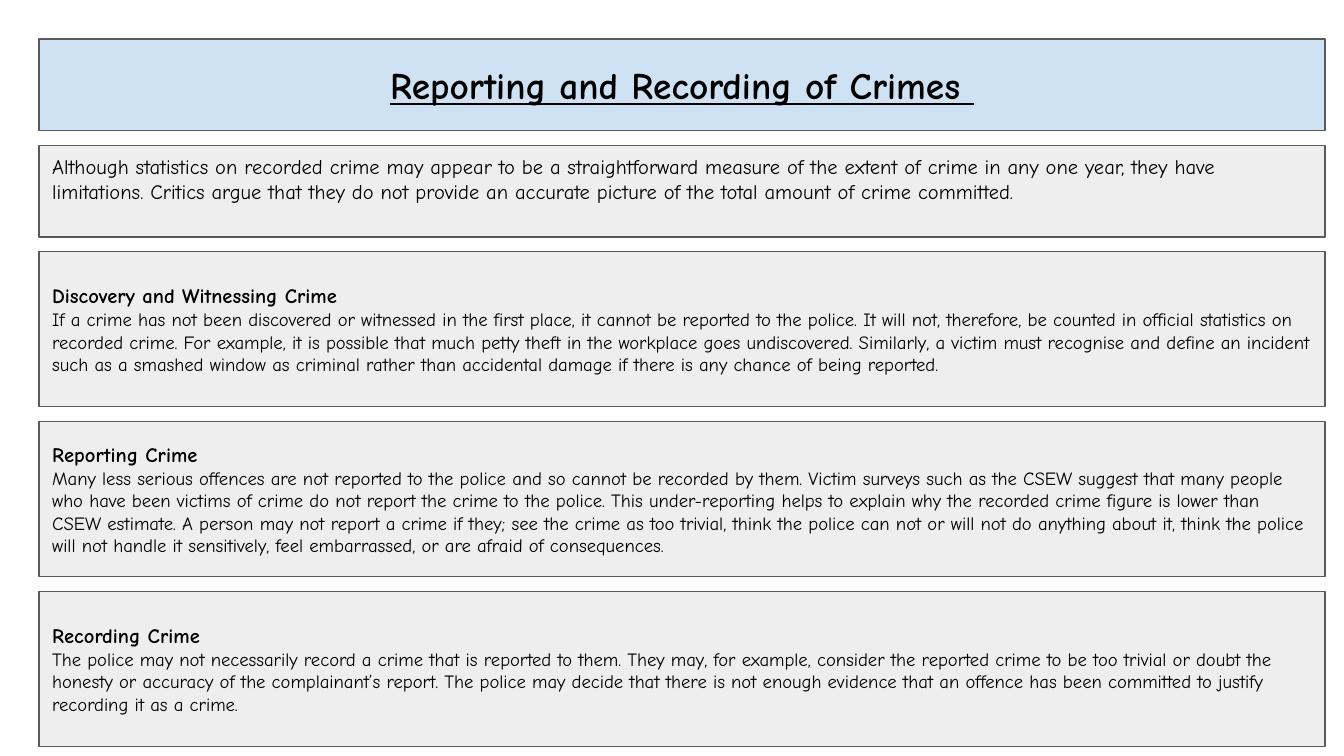
from dataclasses import dataclass

from pptx import Presentation
from pptx.dml.color import RGBColor
from pptx.enum import shapes, text
from pptx.slide import Slide
from pptx.util import Pt

FONT = "Comic Neue"
BLACK = RGBColor(0x00, 0x00, 0x00)
BORDER = RGBColor(0x59, 0x59, 0x59)
BLUE = RGBColor(0xCF, 0xE2, 0xF3)
GREY = RGBColor(0xEE, 0xEE, 0xEE)

LEFT, TOP, WIDTH, GAP = 20.9, 20.9, 689, 8
INSET = 7.2


@dataclass(frozen=True)
class Line:
    words: str
    size: float
    bold: bool = False
    underline: bool = False
    alignment: text.PP_ALIGN = text.PP_ALIGN.LEFT


@dataclass(frozen=True)
class Panel:
    height: float
    lines: tuple[Line, ...]
    fill: RGBColor = GREY
    top_inset: float = INSET
    bottom_inset: float = INSET


def section(heading: str, body: str) -> Panel:
    return Panel(83, (Line(heading, 11, bold=True), Line(body, 10)))


PANELS = (
    Panel(
        49,
        (Line("Reporting and Recording of Crimes ", 20, bold=True, underline=True,
              alignment=text.PP_ALIGN.CENTER),),
        fill=BLUE,
    ),
    Panel(
        49,
        (Line("Although statistics on recorded crime may appear to be a straightforward "
              "measure of the extent of crime in any one year, they have limitations. "
              "Critics argue that they do not provide an accurate picture of the total "
              "amount of crime committed.", 11),),
        top_inset=4,
        bottom_inset=17,
    ),
    section(
        "Discovery and Witnessing Crime",
        "If a crime has not been discovered or witnessed in the first place, it cannot be "
        "reported to the police. It will not, therefore, be counted in official statistics "
        "on recorded crime. For example, it is possible that much petty theft in the "
        "workplace goes undiscovered. Similarly, a victim must recognise and define an "
        "incident such as a smashed window as criminal rather than accidental damage if "
        "there is any chance of being reported.",
    ),
    section(
        "Reporting Crime",
        "Many less serious offences are not reported to the police and so cannot be recorded "
        "by them. Victim surveys such as the CSEW suggest that many people who have been "
        "victims of crime do not report the crime to the police. This under-reporting helps "
        "to explain why the recorded crime figure is lower than CSEW estimate. A person may "
        "not report a crime if they; see the crime as too trivial, think the police can not "
        "or will not do anything about it, think the police will not handle it sensitively, "
        "feel embarrassed, or are afraid of consequences.",
    ),
    section(
        "Recording Crime",
        "The police may not necessarily record a crime that is reported to them. They may, "
        "for example, consider the reported crime to be too trivial or doubt the honesty or "
        "accuracy of the complainant’s report. The police may decide that there is not "
        "enough evidence that an offence has been committed to justify recording it as a "
        "crime.",
    ),
)


def draw_panel(slide: Slide, panel: Panel, top: float) -> None:
    shape = slide.shapes.add_shape(
        shapes.MSO_SHAPE.RECTANGLE, Pt(LEFT), Pt(top), Pt(WIDTH), Pt(panel.height)
    )
    shape.shadow.inherit = False
    shape.fill.solid()
    shape.fill.fore_color.rgb = panel.fill
    shape.line.color.rgb = BORDER
    shape.line.width = Pt(0.75)

    frame = shape.text_frame
    frame.word_wrap = True
    frame.vertical_anchor = text.MSO_ANCHOR.MIDDLE
    frame.margin_left = frame.margin_right = Pt(INSET)
    frame.margin_top = Pt(panel.top_inset)
    frame.margin_bottom = Pt(panel.bottom_inset)

    for index, line in enumerate(panel.lines):
        paragraph = frame.add_paragraph() if index else frame.paragraphs[0]
        paragraph.text = line.words
        paragraph.alignment = line.alignment
        font = paragraph.font
        font.name = FONT
        font.size = Pt(line.size)
        font.bold = line.bold
        font.underline = line.underline
        font.color.rgb = BLACK


def main() -> None:
    presentation = Presentation()
    presentation.slide_width = Pt(720)
    presentation.slide_height = Pt(405)
    slide = presentation.slides.add_slide(presentation.slide_layouts[6])

    top = TOP
    for panel in PANELS:
        draw_panel(slide, panel, top)
        top += panel.height + GAP

    presentation.save("out.pptx")


if __name__ == "__main__":
    main()
